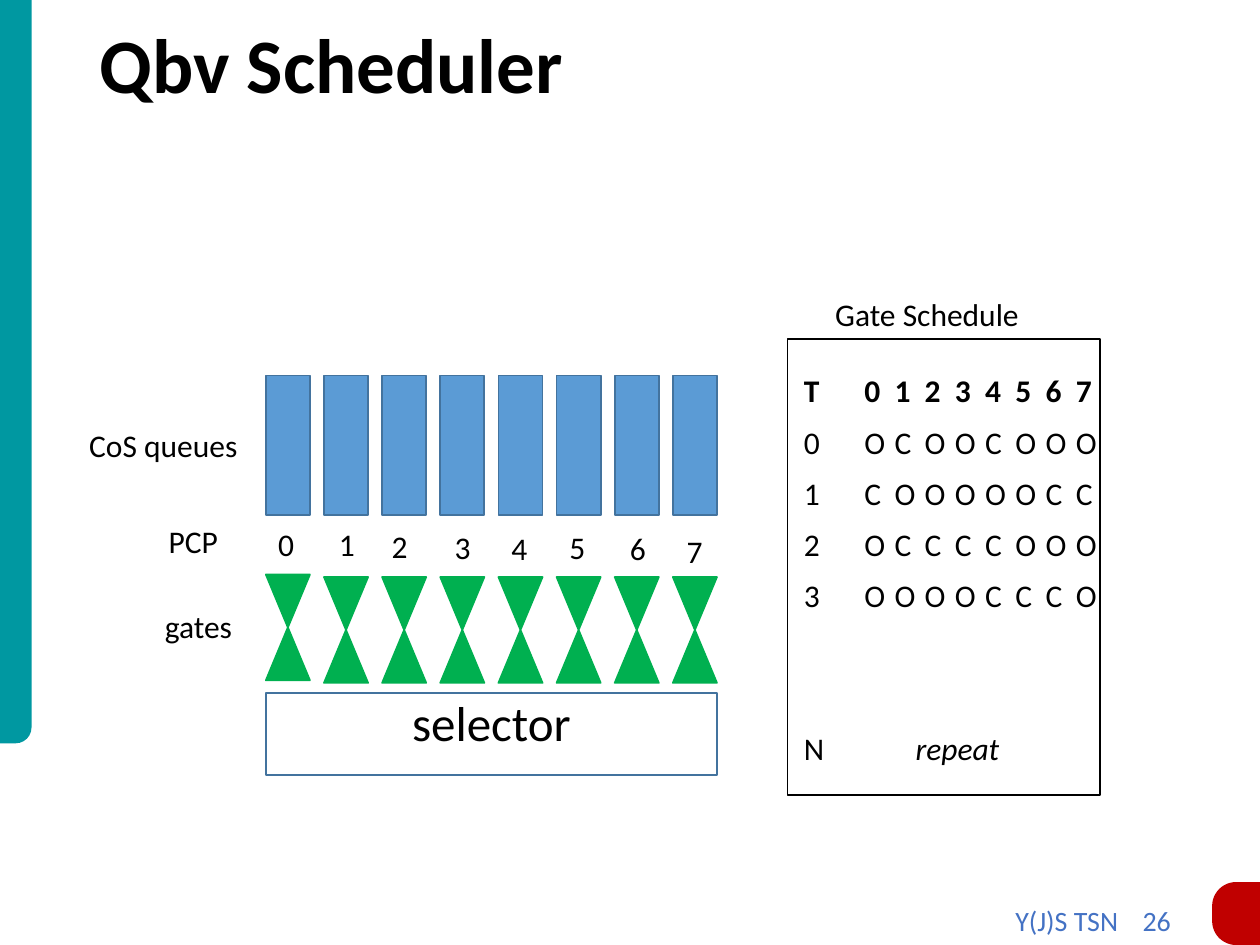
from dataclasses import dataclass

from lxml.etree import SubElement
from pptx import Presentation
from pptx.dml.color import RGBColor
from pptx.enum.shapes import MSO_SHAPE
from pptx.enum.text import MSO_ANCHOR, MSO_AUTO_SIZE, PP_ALIGN
from pptx.oxml.ns import qn
from pptx.util import Inches, Pt


@dataclass(frozen=True)
class Theme:
    """Colours, font and type sizes of the slide."""

    font: str = "Calibri"
    ink: str = "000000"
    teal: str = "0098A1"
    red: str = "C00000"
    footer: str = "4472C4"
    queue: str = "5B9BD5"
    outline: str = "43739E"
    gate: str = "00B050"
    title_size: int = 44
    selector_size: int = 28
    body_size: int = 18
    footer_size: int = 16


THEME = Theme()
QUEUE_COUNT = 8
QUEUE_LEFT = 2.11
QUEUE_WIDTH = 0.35
BANK_WIDTH = 3.58
QUEUE_PITCH = (BANK_WIDTH - QUEUE_WIDTH) / (QUEUE_COUNT - 1)
PCP_PLACES = [(2.11, 4.12), (2.59, 4.12), (3.01, 4.13), (3.51, 4.14),
              (3.96, 4.15), (4.42, 4.14), (4.9, 4.15), (5.35, 4.17)]
GATE_STATES = ["OCOOCOOO", "COOOOOCC", "OCCCCOOO", "OOOOCCCO"]
TABLE_ROWS = 8
TABLE_COLUMNS = QUEUE_COUNT + 2
COLUMN_WIDTH = 0.24
ROW_HEIGHT = 0.4


def style_paragraph(para, size, color=THEME.ink, bold=False, italic=False):
    """Set the font of a whole paragraph."""
    font = para.font
    font.name = THEME.font
    font.size = Pt(size)
    font.bold = bold
    font.italic = italic
    font.color.rgb = RGBColor.from_string(color)


def add_shape(slide, kind, place, fill=None, line=None):
    """Add a flat preset shape with optional fill and outline."""
    shape = slide.shapes.add_shape(kind, *map(Inches, place))
    shape.shadow.inherit = False
    if fill:
        shape.fill.solid()
        shape.fill.fore_color.rgb = RGBColor.from_string(fill)
    else:
        shape.fill.background()
    if line:
        shape.line.color.rgb = RGBColor.from_string(line)
        shape.line.width = Pt(1)
    else:
        shape.line.fill.background()
    return shape


def add_text(slide, text, place, size=THEME.body_size, color=THEME.ink, bold=False):
    """Add a wrapped one-paragraph text box and return its paragraph."""
    box = slide.shapes.add_textbox(*map(Inches, place))
    frame = box.text_frame
    frame.word_wrap = True
    frame.auto_size = MSO_AUTO_SIZE.NONE
    para = frame.paragraphs[0]
    para.text = text
    style_paragraph(para, size, color, bold)
    return para


def add_frame(slide):
    """Add the side bar, the corner tab, the title and the footer."""
    bar = add_shape(slide, MSO_SHAPE.ROUND_1_RECTANGLE, (0, 0, 0.25, 5.9), THEME.teal)
    bar.adjustments[0] = 0.5
    bar.element.spPr.xfrm.set("flipV", "1")
    tab = add_shape(slide, MSO_SHAPE.ROUND_2_SAME_RECTANGLE, (9.56, 7.06, 0.5, 0.38), THEME.red)
    tab.adjustments[0] = 0.5
    tab.adjustments[1] = 0
    tab.rotation = 270
    title = add_text(slide, "Qbv Scheduler", (0.69, 0.12, 8.62, 0.85), THEME.title_size, bold=True)
    title.line_spacing = 0.9
    slide.shapes[-1].text_frame.vertical_anchor = MSO_ANCHOR.MIDDLE
    footer = add_text(slide, "Y(J)S TSN\t26", (7.96, 7.12, 1.54, 0.34),
                      THEME.footer_size, THEME.footer)
    properties = footer.font._element.getparent()
    tab_list = SubElement(properties, qn("a:tabLst"))
    SubElement(tab_list, qn("a:tab"), pos=str(Inches(1.01)), algn="l")
    properties.insert(0, tab_list)


def clear_cell(cell):
    """Remove the fill and all four borders of a table cell."""
    cell.fill.background()
    properties = cell._tc.get_or_add_tcPr()
    for position, side in enumerate(("a:lnL", "a:lnR", "a:lnT", "a:lnB")):
        border = SubElement(properties, qn(side), w="0")
        SubElement(border, qn("a:noFill"))
        properties.insert(position, border)


def fill_cell(cell, text, bold=False, italic=False):
    """Write centred text into a table cell."""
    para = cell.text_frame.paragraphs[0]
    para.text = text
    para.alignment = PP_ALIGN.CENTER
    style_paragraph(para, THEME.body_size, bold=bold, italic=italic)


def add_schedule(slide):
    """Add the gate schedule table with its frame and caption."""
    place = (6.28, 2.91, COLUMN_WIDTH * TABLE_COLUMNS, ROW_HEIGHT * TABLE_ROWS)
    table = slide.shapes.add_table(TABLE_ROWS, TABLE_COLUMNS, *map(Inches, place)).table
    table.first_row = False
    table.horz_banding = False
    style = table._tbl.tblPr.find(qn("a:tableStyleId"))
    style.text = "{2D5ABB26-0587-4C30-8999-92F81FD0307C}"
    for cell in table.iter_cells():
        clear_cell(cell)
    pcp_values = "".join(map(str, range(QUEUE_COUNT)))
    lines = [("T", pcp_values)] + [(str(time), states) for time, states in enumerate(GATE_STATES)]
    for row, (time, values) in enumerate(lines):
        fill_cell(table.cell(row, 0), time, bold=row == 0)
        for column, value in enumerate(values, start=2):
            fill_cell(table.cell(row, column), value, bold=row == 0)
    last = TABLE_ROWS - 1
    fill_cell(table.cell(last, 0), "N")
    table.cell(last, 1).merge(table.cell(last, TABLE_COLUMNS - 1))
    fill_cell(table.cell(last, 1), "repeat", italic=True)
    add_shape(slide, MSO_SHAPE.RECTANGLE, (6.25, 2.69, 2.48, 3.62), line=THEME.ink)
    add_text(slide, "Gate Schedule", (6.53, 2.29, 1.92, 0.4))


def add_queues(slide):
    """Add the queues, their PCP values, the gates and the selector."""
    for index, (label_left, label_top) in enumerate(PCP_PLACES):
        left = QUEUE_LEFT + index * QUEUE_PITCH
        gate_top = 4.58 if index else 4.56
        add_shape(slide, MSO_SHAPE.RECTANGLE, (left, 2.98, QUEUE_WIDTH, 1.11),
                  THEME.queue, THEME.outline)
        add_shape(slide, MSO_SHAPE.FLOWCHART_COLLATE, (left, gate_top, QUEUE_WIDTH, 0.84),
                  THEME.gate, THEME.gate)
        add_text(slide, str(index), (label_left, label_top, QUEUE_WIDTH, 0.4))
    add_shape(slide, MSO_SHAPE.RECTANGLE, (QUEUE_LEFT, 5.5, BANK_WIDTH, 0.65), line=THEME.outline)
    selector = add_text(slide, "selector", (QUEUE_LEFT, 5.45, BANK_WIDTH, 0.57),
                        THEME.selector_size)
    selector.alignment = PP_ALIGN.CENTER
    add_text(slide, "gates", (1.21, 4.77, 0.87, 0.4))
    add_text(slide, "CoS queues", (0.61, 3.33, 1.42, 0.4))
    add_text(slide, "PCP", (1.24, 4.09, 0.87, 0.4))


def main():
    """Build the slide and save the deck."""
    deck = Presentation()
    deck.slide_width = Inches(10)
    deck.slide_height = Inches(7.5)
    page = deck.slides.add_slide(deck.slide_layouts[6])
    add_frame(page)
    add_schedule(page)
    add_queues(page)
    deck.save("out.pptx")


if __name__ == "__main__":
    main()
